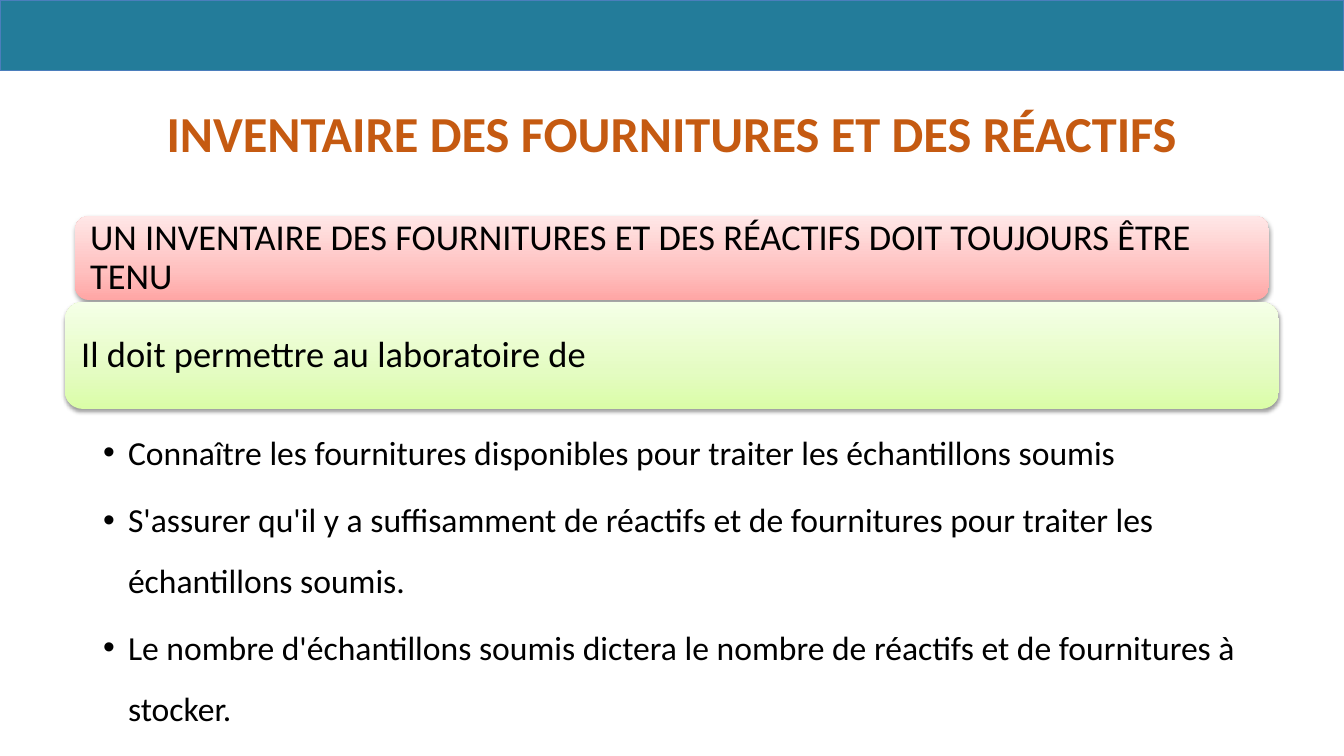
import copy

import lxml.etree
import pptx
import pptx.dml.color
import pptx.enum.shapes
import pptx.enum.text
import pptx.oxml
import pptx.oxml.ns
import pptx.util

RGBColor = pptx.dml.color.RGBColor
TEAL = RGBColor(0x23, 0x7C, 0x9A)
BLUE = RGBColor(0x4B, 0x7E, 0xBC)
ORANGE = RGBColor(0xC5, 0x5A, 0x11)
BLACK = RGBColor(0x00, 0x00, 0x00)
REDS = [RGBColor(0xFF, 0xA6, 0xA5), RGBColor(0xFF, 0xC0, 0xBF), RGBColor(0xFF, 0xE7, 0xE7)]
GREENS = [RGBColor(0xDA, 0xFD, 0xA7), RGBColor(0xE4, 0xFC, 0xC2), RGBColor(0xF5, 0xFF, 0xE7)]
STOP_POSITIONS = [0, 0.35, 1]
PX = 914400 / 100.8
SHADOW = (
    f'<a:outerShdw {pptx.oxml.ns.nsdecls("a")} blurRad="40000" dist="20000" dir="5400000" rotWithShape="0">'
    '<a:srgbClr val="000000"><a:alpha val="38000"/></a:srgbClr></a:outerShdw>'
)


def px(length):
    return pptx.util.Emu(round(length * PX))


class SlideBuilder:
    font = "Calibri"

    def __init__(self, presentation):
        self.slide = presentation.slides.add_slide(presentation.slide_layouts[6])

    def style(self, paragraph, size, color=BLACK, bold=False):
        for run in paragraph.runs:
            run.font.name = self.font
            run.font.size = pptx.util.Pt(size)
            run.font.bold = bold
            run.font.color.rgb = color

    def frame(self, shape, margins):
        text_frame = shape.text_frame
        text_frame.word_wrap = True
        text_frame.margin_left, text_frame.margin_top, text_frame.margin_right, text_frame.margin_bottom = map(px, margins)
        return text_frame

    def shape(self, kind, box):
        shape = self.slide.shapes.add_shape(kind, *map(px, box))
        shape.shadow.inherit = False
        return shape

    def band(self, box, fill, line):
        shape = self.shape(pptx.enum.shapes.MSO_SHAPE.RECTANGLE, box)
        shape.fill.solid()
        shape.fill.fore_color.rgb = fill
        shape.line.color.rgb = line
        shape.line.width = pptx.util.Pt(0.75)

    def title(self, box, text):
        shape = self.slide.shapes.add_textbox(*map(px, box))
        text_frame = self.frame(shape, (10, 5, 10, 5))
        text_frame.text = text
        paragraph = text_frame.paragraphs[0]
        paragraph.alignment = pptx.enum.text.PP_ALIGN.CENTER
        self.style(paragraph, 36, ORANGE, True)

    def panel(self, box, colors, text):
        shape = self.shape(pptx.enum.shapes.MSO_SHAPE.ROUNDED_RECTANGLE, box)
        shape.line.fill.background()
        shape.fill.gradient()
        shape.fill.gradient_angle = 90
        properties = shape._element.spPr
        stops = properties.find(".//" + pptx.oxml.ns.qn("a:gsLst"))
        stops.append(copy.deepcopy(stops[0]))
        for stop, position, color in zip(shape.fill.gradient_stops, STOP_POSITIONS, colors):
            stop.position = position
            stop.color.rgb = color
        properties.find(pptx.oxml.ns.qn("a:effectLst")).append(pptx.oxml.parse_xml(SHADOW))
        text_frame = self.frame(shape, (11, 11, 11, 11))
        text_frame.vertical_anchor = pptx.enum.text.MSO_ANCHOR.MIDDLE
        text_frame.text = text
        paragraph = text_frame.paragraphs[0]
        paragraph.alignment = pptx.enum.text.PP_ALIGN.LEFT
        paragraph.line_spacing = 0.9
        self.style(paragraph, 26)

    def bullets(self, box, items):
        shape = self.slide.shapes.add_textbox(*map(px, box))
        text_frame = self.frame(shape, (38, 3, 19, 3))
        text_frame.text = "\n".join(items)
        for paragraph in text_frame.paragraphs:
            paragraph.level = 1
            paragraph.line_spacing = 1.5
            paragraph.space_after = pptx.util.Pt(4.8)
            properties = paragraph._p.get_or_add_pPr()
            properties.set("marL", str(px(25)))
            properties.set("indent", str(px(-25)))
            lxml.etree.SubElement(properties, pptx.oxml.ns.qn("a:buFont"), typeface="Arial")
            lxml.etree.SubElement(properties, pptx.oxml.ns.qn("a:buChar"), char="•")
            self.style(paragraph, 24)


def main():
    presentation = pptx.Presentation()
    presentation.slide_width = px(1344)
    presentation.slide_height = px(756)
    builder = SlideBuilder(presentation)
    builder.band((0, 0, 1344, 71), TEAL, BLUE)
    builder.title((97, 97, 1150, 132), "INVENTAIRE DES FOURNITURES ET DES RÉACTIFS")
    builder.panel(
        (75, 216, 1194, 84), REDS,
        "UN INVENTAIRE DES FOURNITURES ET DES RÉACTIFS DOIT TOUJOURS ÊTRE TENU",
    )
    builder.panel((65, 302, 1214, 107), GREENS, "Il doit permettre au laboratoire de")
    builder.bullets((65, 409, 1214, 299), [
        "Connaître les fournitures disponibles pour traiter les échantillons soumis",
        "S'assurer qu'il y a suffisamment de réactifs et de fournitures pour traiter les échantillons soumis.",
        "Le nombre d'échantillons soumis dictera le nombre de réactifs et de fournitures à stocker.",
    ])
    presentation.save("out.pptx")


if __name__ == "__main__":
    main()
